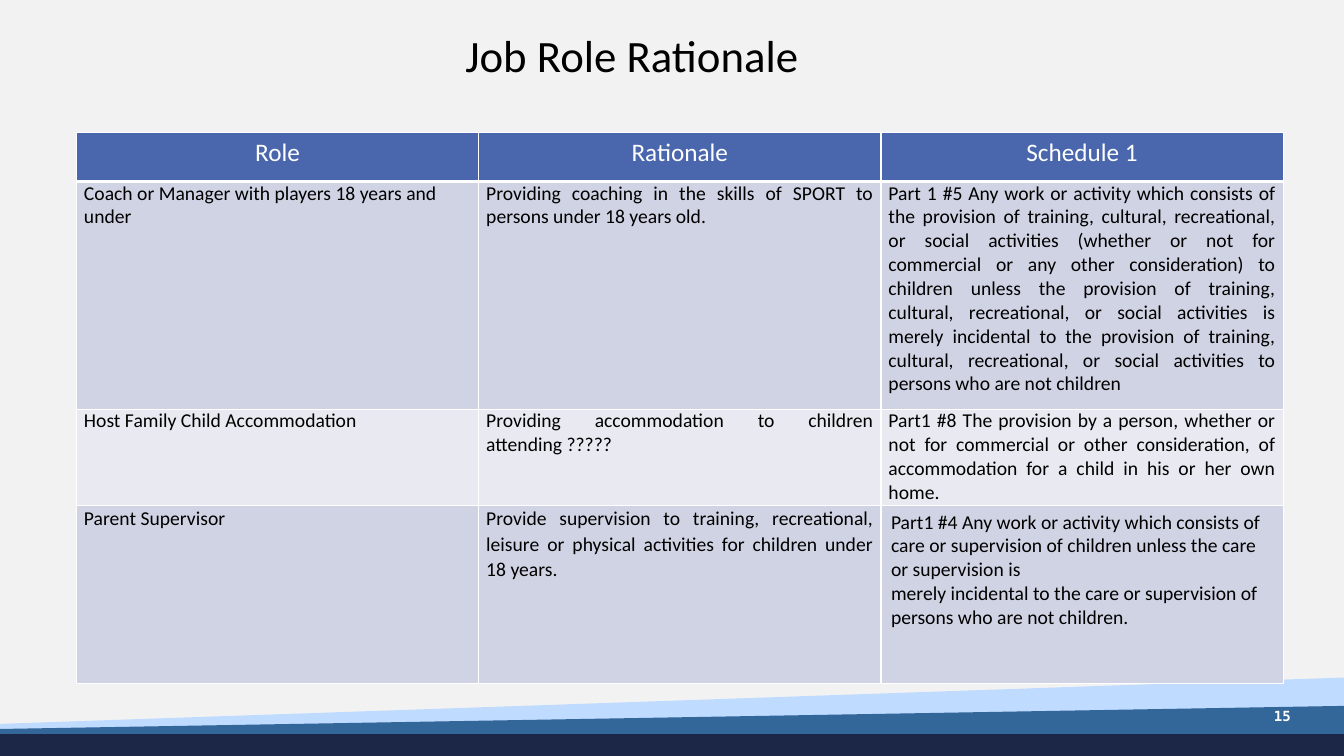
from lxml import etree
from pptx import Presentation
from pptx.dml.color import RGBColor
from pptx.enum import text
from pptx.oxml.ns import qn
from pptx.util import Pt

COLORS = {
    "background": "F2F2F2", "black": "000000", "white": "FFFFFF",
    "header": "4A66AC", "band_dark": "D0D3E3", "band_light": "E9EAF1",
    "wave_light": "BFDBFF", "wave_mid": "336699", "wave_navy": "1C2747",
}
LEFT, CENTER = text.PP_ALIGN.LEFT, text.PP_ALIGN.CENTER
RIGHT, JUSTIFY = text.PP_ALIGN.RIGHT, text.PP_ALIGN.JUSTIFY
MIDDLE = text.MSO_ANCHOR.MIDDLE
SLIDE_W, SLIDE_H = 960, 540

HEADERS = ["Role", "Rationale", "Schedule 1"]
ROLES = [
    ["Coach or Manager with players 18 years and under",
     "Providing coaching in the skills of SPORT to persons under 18 years old.",
     "Part 1 #5 Any work or activity which consists of the provision of training, "
     "cultural, recreational, or social activities (whether or not for commercial or "
     "any other consideration) to children unless the provision of training, cultural, "
     "recreational, or social activities is merely incidental to the provision of "
     "training, cultural, recreational, or social activities to persons who are not "
     "children"],
    ["Host Family Child Accommodation",
     "Providing accommodation to children attending ?????",
     "Part1 #8 The provision by a person, whether or not for commercial or other "
     "consideration, of accommodation for a child in his or her own home."],
    ["Parent Supervisor",
     "Provide supervision to training, recreational, leisure or physical activities "
     "for children under 18 years.",
     "Part1 #4 Any work or activity which consists of care or supervision of children "
     "unless the care or supervision is\n"
     "merely incidental to the care or supervision of persons who are not children."],
]
ROW_HEIGHTS = [35.2, 162.8, 68.6, 127.2]


def rgb(name):
    return RGBColor.from_string(COLORS[name])


def write(tf, content, size, color, align, font="Calibri", bold=False, spacing=None):
    tf.text = content
    tf.word_wrap = True
    for p in tf.paragraphs:
        p.alignment = align
        if spacing:
            p.line_spacing = spacing
        for r in p.runs:
            r.font.name, r.font.size, r.font.bold = font, Pt(size), bold
            r.font.color.rgb = rgb(color)


def set_borders(cell, bottom=1):
    """Draw white cell borders; they must precede the fill in tcPr."""
    tc_pr = cell._tc.get_or_add_tcPr()
    for i, (side, width) in enumerate([("L", 1), ("R", 1), ("T", 1), ("B", bottom)]):
        ln = etree.Element(qn(f"a:ln{side}"), w=str(Pt(width)))
        fill = etree.SubElement(ln, qn("a:solidFill"))
        etree.SubElement(fill, qn("a:srgbClr"), val=COLORS["white"])
        tc_pr.insert(i, ln)


# Layered bands along the bottom edge
def add_waves(s, x, y, w, h):
    right, bottom = x + w, y + h
    waves = [
        ("wave_light", [(right, y), (right, y + 39.6), (x + 502.6, bottom),
                        (x, bottom), (x, y + 33.1)]),
        ("wave_mid", [(right, y + 20.2), (right, bottom), (x, bottom), (x, y + 36.7)]),
        ("wave_navy", [(x, y + 40.3), (right, y + 40.3), (right, bottom), (x, bottom)]),
    ]
    for color, points in waves:
        start, *rest = [(Pt(px), Pt(py)) for px, py in points]
        builder = s.shapes.build_freeform(*start)
        builder.add_line_segments(rest, close=True)
        sp = builder.convert_to_shape()
        sp.shadow.inherit = False
        sp.fill.solid()
        sp.fill.fore_color.rgb = rgb(color)
        sp.line.fill.background()


def add_title(s, x, y, w, h):
    sp = s.shapes.title
    sp.left, sp.top, sp.width, sp.height = Pt(x), Pt(y), Pt(w), Pt(h)
    sp.text_frame.vertical_anchor = MIDDLE
    write(sp.text_frame, "Job Role Rationale", 32, "black", CENTER, spacing=0.9)


def add_page_number(s, x, y, w, h):
    sp = s.shapes.add_textbox(Pt(x), Pt(y), Pt(w), Pt(h))
    sp.text_frame.vertical_anchor = MIDDLE
    write(sp.text_frame, "15", 10, "white", RIGHT, "DejaVu Sans Mono", True)


# Table of roles, rationales and schedule entries
def add_role_table(s, x, y, w, h):
    rows = [HEADERS] + ROLES
    table = s.shapes.add_table(len(rows), len(HEADERS), Pt(x), Pt(y), Pt(w), Pt(h)).table
    for column in table.columns:
        column.width = Pt(w / len(HEADERS))
    for i, (row, height) in enumerate(zip(rows, ROW_HEIGHTS)):
        table.rows[i].height = Pt(height)
        for j, content in enumerate(row):
            cell = table.cell(i, j)
            schedule_list = "\n" in content
            cell.fill.solid()
            if i == 0:
                cell.fill.fore_color.rgb = rgb("header")
                write(cell.text_frame, content, 18, "white", CENTER)
            else:
                cell.fill.fore_color.rgb = rgb("band_dark" if i % 2 else "band_light")
                align = LEFT if j == 0 or schedule_list else JUSTIFY
                spacing = 1.07 if i == 3 and not schedule_list else None
                write(cell.text_frame, content, 14, "black", align, spacing=spacing)
                if not schedule_list:
                    cell.margin_left = cell.margin_right = Pt(5.4)
                    cell.margin_top = cell.margin_bottom = Pt(0)
            set_borders(cell, bottom=1 if i else 3)


def main():
    prs = Presentation()
    prs.slide_width, prs.slide_height = Pt(SLIDE_W), Pt(SLIDE_H)
    s = prs.slides.add_slide(prs.slide_layouts[5])
    s.background.fill.solid()
    s.background.fill.fore_color.rgb = rgb("background")
    add_waves(s, 0, 484, SLIDE_W, SLIDE_H - 484)
    add_title(s, 37.4, 10.8, 828, 61.2)
    add_page_number(s, 713, 497, 216, 28.8)
    add_role_table(s, 54.6, 94.4, 862, sum(ROW_HEIGHTS))
    prs.save("out.pptx")


if __name__ == "__main__":
    main()
